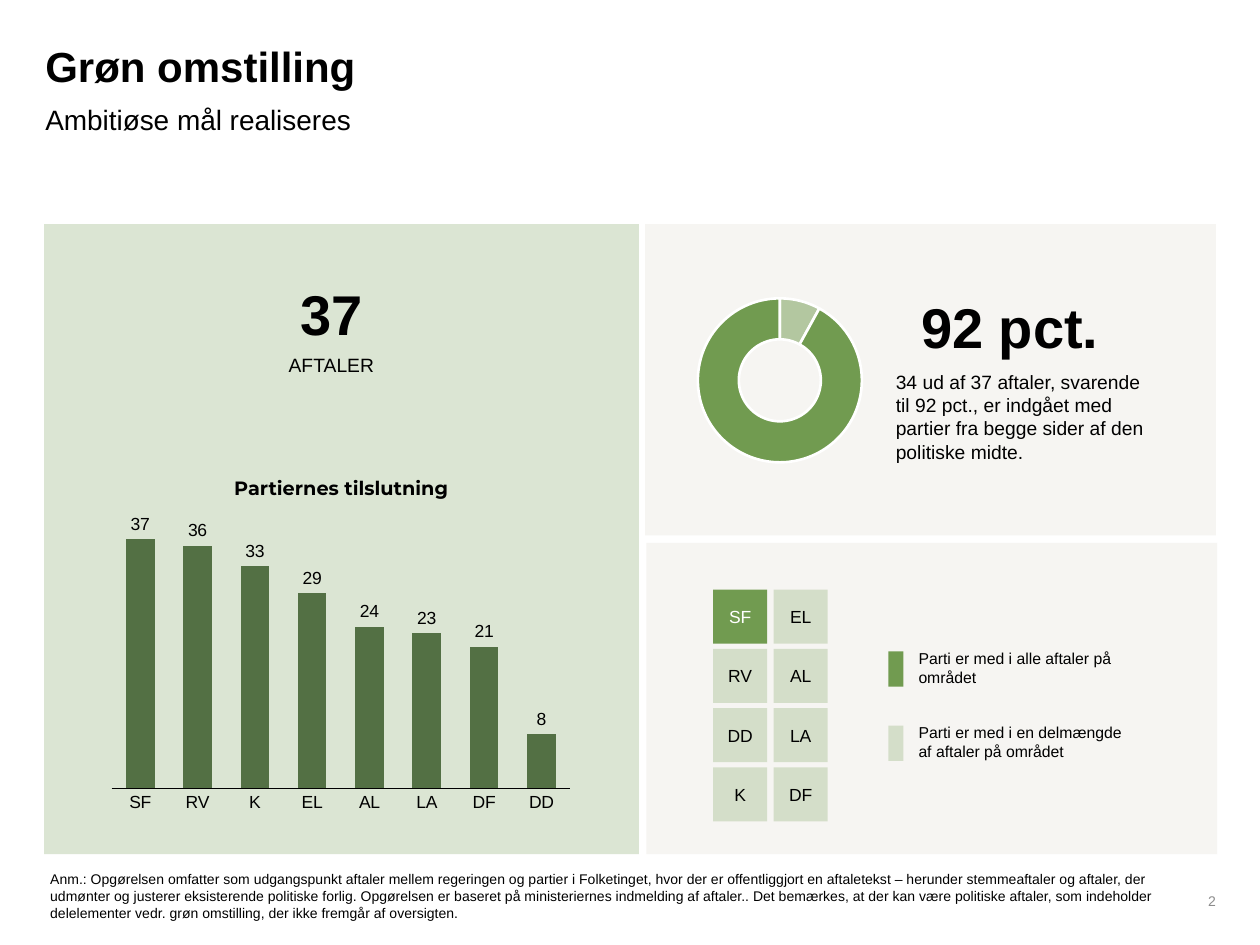
from dataclasses import dataclass

import pptx
import pptx.chart.data
import pptx.dml.color
import pptx.enum.chart
import pptx.enum.text
import pptx.oxml
import pptx.oxml.ns
import pptx.util
from pptx.util import Inches

GREEN, DARK_GREEN, SAND = "719B50", "537044", "F6F5F2"
BLACK, WHITE, GREY = "000000", "FFFFFF", "8C8C8C"
ALIGN = pptx.enum.text.PP_ALIGN
ANCHOR = pptx.enum.text.MSO_ANCHOR
CHART_TYPE = pptx.enum.chart.XL_CHART_TYPE


@dataclass
class Text:
    words: str
    left: float
    top: float
    width: float
    height: float
    size: float
    bold: bool = False
    align: ALIGN = ALIGN.LEFT
    anchor: ANCHOR = ANCHOR.TOP
    color: str = BLACK
    font: str = "Arial"
    line_spacing: float = 1.0
    inset: tuple = (0, 0)


@dataclass
class Block:
    left: float
    top: float
    width: float
    height: float
    color: str
    opacity: int = 100
    label: str = ""
    label_color: str = BLACK


def rgb(color: str) -> pptx.dml.color.RGBColor:
    return pptx.dml.color.RGBColor.from_string(color)


def paint(fill, color: str, opacity: int = 100) -> None:
    fill.solid()
    fill.fore_color.rgb = rgb(color)
    if opacity < 100:
        # The colour element is the last srgbClr reachable from the fill
        solid = fill._xPr.find(pptx.oxml.ns.qn("a:solidFill"))
        solid[0].append(pptx.oxml.parse_xml(
            f'<a:alpha {pptx.oxml.ns.nsdecls("a")} val="{opacity * 1000}"/>'))


def set_font(font, size: float, color: str = BLACK, bold: bool = False,
             name: str = "Arial") -> None:
    font.name, font.size, font.bold = name, pptx.util.Pt(size), bold
    font.color.rgb = rgb(color)


def add_text(slide, text: Text) -> None:
    box = slide.shapes.add_textbox(Inches(text.left), Inches(text.top),
                                   Inches(text.width), Inches(text.height))
    frame = box.text_frame
    frame.word_wrap = True
    frame.vertical_anchor = text.anchor
    frame.margin_left = frame.margin_right = Inches(text.inset[0])
    frame.margin_top = frame.margin_bottom = Inches(text.inset[1])
    paragraph = frame.paragraphs[0]
    paragraph.text = text.words
    paragraph.alignment = text.align
    paragraph.line_spacing = text.line_spacing
    set_font(paragraph.font, text.size, text.color, text.bold, text.font)


def add_block(slide, block: Block) -> None:
    rectangle = slide.shapes.add_shape(
        pptx.enum.shapes.MSO_SHAPE.RECTANGLE, Inches(block.left),
        Inches(block.top), Inches(block.width), Inches(block.height))
    rectangle.shadow.inherit = False
    paint(rectangle.fill, block.color, block.opacity)
    rectangle.line.fill.background()
    if block.label:
        frame = rectangle.text_frame
        frame.word_wrap = False
        frame.vertical_anchor = ANCHOR.MIDDLE
        paragraph = frame.paragraphs[0]
        paragraph.text = block.label
        paragraph.alignment = ALIGN.CENTER
        set_font(paragraph.font, 10, block.label_color)


def add_chart(slide, kind: CHART_TYPE, values: dict, left: float, top: float,
              width: float, height: float, plot_area: tuple):
    data = pptx.chart.data.CategoryChartData()
    data.categories = list(values)
    data.add_series("Series 1", list(values.values()))
    chart = slide.shapes.add_chart(kind, Inches(left), Inches(top), Inches(width),
                                   Inches(height), data).chart
    chart.has_title = chart.has_legend = False
    set_font(chart.font, 10)
    edges = "".join(f'<c:{tag} val="{value}"/>'
                    for tag, value in zip("xywh", plot_area))
    layout = pptx.oxml.parse_xml(
        f'<c:layout {pptx.oxml.ns.nsdecls("c")}><c:manualLayout>'
        '<c:layoutTarget val="inner"/><c:xMode val="edge"/><c:yMode val="edge"/>'
        f'{edges}</c:manualLayout></c:layout>')
    area = chart._chartSpace.chart.plotArea
    for automatic in area.findall(pptx.oxml.ns.qn("c:layout")):
        area.remove(automatic)
    area.insert(0, layout)
    return chart


def add_party_chart(slide) -> None:
    support = {"SF": 37, "RV": 36, "K": 33, "EL": 29,
               "AL": 24, "LA": 23, "DF": 21, "DD": 8}
    chart = add_chart(slide, CHART_TYPE.COLUMN_CLUSTERED, support,
                      0.81, 4.07, 3.79, 2.43, (0.02, 0.02, 0.96, 0.88))
    plot = chart.plots[0]
    plot.gap_width = 100
    plot.vary_by_categories = False
    paint(plot.series[0].format.fill, DARK_GREEN)
    plot.has_data_labels = True
    labels = plot.data_labels
    labels.show_value = True
    labels.position = pptx.enum.chart.XL_LABEL_POSITION.OUTSIDE_END
    set_font(labels.font, 10)
    counts, parties = chart.value_axis, chart.category_axis
    counts.minimum_scale, counts.maximum_scale = 0, 40
    counts.has_major_gridlines = counts.visible = False
    parties.major_tick_mark = pptx.enum.chart.XL_TICK_MARK.NONE
    parties.format.line.color.rgb = rgb(BLACK)
    parties.format.line.width = pptx.util.Pt(0.75)
    set_font(parties.tick_labels.font, 10)


def add_share_chart(slide) -> None:
    chart = add_chart(slide, CHART_TYPE.DOUGHNUT, {"1": 8, "2": 92, "3": None},
                      5.42, 2.06, 1.48, 1.9, (0.08, 0.06, 0.88, 0.89))
    plot = chart.plots[0]
    plot.vary_by_categories = False
    plot.has_data_labels = False
    plot._element.find(pptx.oxml.ns.qn("c:holeSize")).set("val", "61")
    for index, opacity in enumerate((50, 100)):
        ring_part = plot.series[0].points[index].format
        paint(ring_part.fill, GREEN, opacity)
        ring_part.line.color.rgb = rgb(WHITE)
        ring_part.line.width = pptx.util.Pt(1.5)


def main() -> None:
    deck = pptx.Presentation()
    deck.slide_width, deck.slide_height = Inches(10), Inches(7.5)
    slide = deck.slides.add_slide(deck.slide_layouts[6])

    # Panels
    for panel in (Block(0.35, 1.78, 4.72, 5, GREEN, 25),
                  Block(5.13, 4.31, 4.53, 2.47, SAND),
                  Block(5.12, 1.78, 4.53, 2.47, SAND)):
        add_block(slide, panel)

    # Charts
    add_share_chart(slide)
    add_party_chart(slide)

    # Party tiles, column by column
    for column, parties in enumerate((("SF", "RV", "DD", "K"),
                                      ("EL", "AL", "LA", "DF"))):
        for row, party in enumerate(parties):
            in_all = party == "SF"
            add_block(slide, Block(5.66 + 0.48 * column, 4.68 + 0.47 * row,
                                   0.43, 0.43, GREEN, 100 if in_all else 25,
                                   party, WHITE if in_all else BLACK))

    # Legend
    for top, opacity, meaning in (
            (5.15, 100, "Parti er med i alle aftaler på området"),
            (5.74, 25, "Parti er med i en delmængde\vaf aftaler på området")):
        add_block(slide, Block(7.05, top + 0.02, 0.12, 0.28, GREEN, opacity))
        add_text(slide, Text(meaning, 7.29, top, 1.9, 0.3, 9))

    # Headings, key figures, note and page number
    note = ("Anm.: Opgørelsen omfatter som udgangspunkt aftaler mellem regeringen og "
            "partier i Folketinget, hvor der er offentliggjort en aftaletekst – herunder "
            "stemmeaftaler og aftaler, der udmønter og justerer eksisterende politiske "
            "forlig. Opgørelsen er baseret på ministeriernes indmelding af aftaler.. Det "
            "bemærkes, at der kan være politiske aftaler, som indeholder delelementer "
            "vedr. grøn omstilling, der ikke fremgår af oversigten.")
    share = ("34 ud af 37 aftaler, svarende til 92 pct., er indgået med partier fra "
             "begge sider af den politiske midte.")
    for text in (
            Text("Grøn omstilling", 0.36, 0.37, 7.87, 0.39, 24, True, line_spacing=0.9),
            Text("Ambitiøse mål realiseres", 0.36, 0.81, 9.07, 0.31, 16,
                 anchor=ANCHOR.MIDDLE, line_spacing=0.9),
            Text("37", 2.03, 2.22, 1.2, 0.54, 32, True, ALIGN.CENTER),
            Text("AFTALER", 1.89, 2.8, 1.48, 0.19, 11, align=ALIGN.CENTER),
            Text("Partiernes tilslutning", 1.26, 3.77, 2.9, 0.19, 11, True,
                 ALIGN.CENTER, ANCHOR.BOTTOM, font="Montserrat"),
            Text(share, 7.11, 2.94, 2.06, 0.74, 11),
            Text("92 pct.", 6.92, 2.22, 2.19, 1.55, 32, True, ALIGN.CENTER,
                 inset=(0.1, 0.1)),
            Text("2", 7.4, 6.95, 2.25, 0.4, 8, align=ALIGN.RIGHT,
                 anchor=ANCHOR.MIDDLE, color=GREY),
            Text(note, 0.3, 6.86, 9.25, 0.5, 8, inset=(0.1, 0.05))):
        add_text(slide, text)

    deck.save("out.pptx")


if __name__ == "__main__":
    main()
